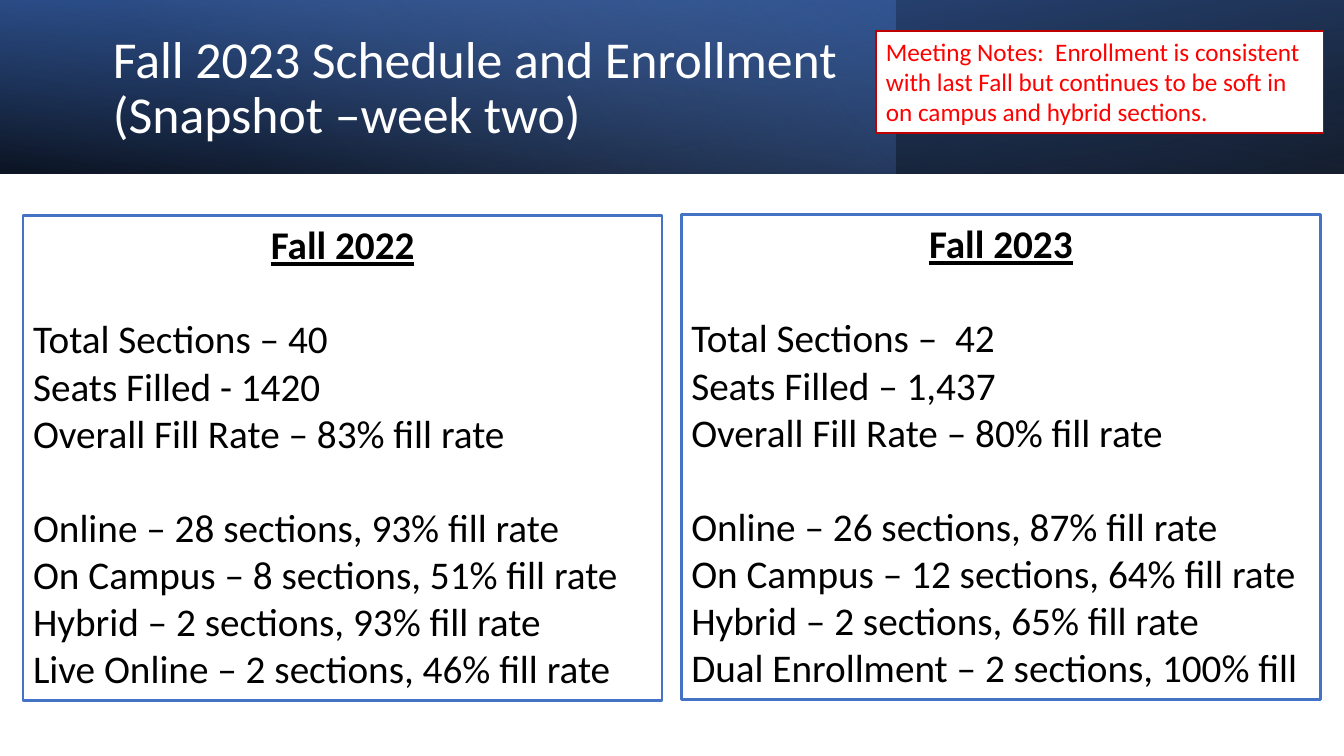
import pptx
import pptx.dml.color
import pptx.enum.shapes
import pptx.enum.text
import pptx.oxml
import pptx.oxml.ns
import pptx.util

Pt = pptx.util.Pt
RGBColor = pptx.dml.color.RGBColor
Align = pptx.enum.text.PP_ALIGN
Anchor = pptx.enum.text.MSO_ANCHOR

WHITE = RGBColor(0xFF, 0xFF, 0xFF)
BLACK = RGBColor(0x00, 0x00, 0x00)
NAVY = RGBColor(0x2F, 0x55, 0x97)
BLUE = RGBColor(0x44, 0x72, 0xC4)
PALE_BLUE = RGBColor(0x8F, 0xAA, 0xDC)
RED = RGBColor(0xFF, 0x00, 0x00)
DARK_RED = RGBColor(0xC0, 0x00, 0x00)

PAGE_WIDTH, PAGE_HEIGHT, BAND_HEIGHT = 960, 540, 123.84


class SlideBuilder:
    font = "Calibri"
    body_size = 28
    blank_line = 33.6

    def __init__(self, page):
        self.page = page

    def add_span(self, para, text, size, color, heading=False):
        span = para.add_run()
        span.text = text
        span.font.name = self.font
        span.font.size = Pt(size)
        span.font.color.rgb = color
        span.font.bold = heading
        span.font.underline = heading

    def gradient_band(self, width, angle, stops, rotation=0, flip=False):
        """Stops are (position %, colour, opacity %)."""
        band = self.page.shapes.add_shape(
            pptx.enum.shapes.MSO_SHAPE.RECTANGLE, 0, 0, Pt(width), Pt(BAND_HEIGHT))
        band.shadow.inherit = False
        band.line.fill.background()
        band.rotation = rotation
        properties = band.element.spPr
        if flip:
            properties.find(pptx.oxml.ns.qn("a:xfrm")).set("flipH", "1")
        stop_xml = "".join(
            f'<a:gs pos="{position * 1000}"><a:srgbClr val="{color}">'
            f'<a:alpha val="{opacity * 1000}"/></a:srgbClr></a:gs>'
            for position, color, opacity in stops)
        gradient = pptx.oxml.parse_xml(
            f'<a:gradFill {pptx.oxml.ns.nsdecls("a")} rotWithShape="1">'
            f'<a:gsLst>{stop_xml}</a:gsLst>'
            f'<a:lin ang="{angle * 60000}" scaled="0"/></a:gradFill>')
        properties.find(pptx.oxml.ns.qn("a:prstGeom")).addnext(gradient)

    def title(self, lines, left, top, width, height, size):
        title = self.page.shapes.title
        title.left, title.top = Pt(left), Pt(top)
        title.width, title.height = Pt(width), Pt(height)
        # Bring the title in front of the bands
        title.element.getparent().append(title.element)
        frame = title.text_frame
        frame.word_wrap = True
        frame.auto_size = pptx.enum.text.MSO_AUTO_SIZE.NONE
        frame.vertical_anchor = Anchor.MIDDLE
        para = frame.paragraphs[0]
        para.alignment = Align.LEFT
        para.line_spacing = 0.9
        para.space_before = Pt(0)
        for index, line in enumerate(lines):
            if index:
                para.add_line_break()
            self.add_span(para, line, size, WHITE)

    def outlined_box(self, left, top, width, height, color, weight):
        box = self.page.shapes.add_textbox(Pt(left), Pt(top), Pt(width), Pt(height))
        box.line.color.rgb = color
        box.line.width = Pt(weight)
        box.text_frame.word_wrap = True
        box.text_frame.vertical_anchor = Anchor.TOP
        return box

    def term_box(self, left, top, heading, groups):
        box = self.outlined_box(left, top, 456.48, 346.32, BLUE, 1.75)
        para = box.text_frame.paragraphs[0]
        para.alignment = Align.CENTER
        self.add_span(para, heading, self.body_size, BLACK, heading=True)
        for group in groups:
            for index, line in enumerate(group):
                para = box.text_frame.add_paragraph()
                para.alignment = Align.LEFT
                para.space_before = Pt(0 if index else self.blank_line)
                self.add_span(para, line, self.body_size, BLACK)

    def note(self, text, left, top, width, height):
        box = self.outlined_box(left, top, width, height, DARK_RED, 1.25)
        box.fill.solid()
        box.fill.fore_color.rgb = WHITE
        self.add_span(box.text_frame.paragraphs[0], text, 18, RED)


def main():
    deck = pptx.Presentation()
    deck.slide_width, deck.slide_height = Pt(PAGE_WIDTH), Pt(PAGE_HEIGHT)
    builder = SlideBuilder(deck.slides.add_slide(deck.slide_layouts[5]))

    # Header bands
    builder.gradient_band(PAGE_WIDTH, 100, [(0, BLACK, 96), (100, NAVY, 100)],
                          rotation=180, flip=True)
    builder.gradient_band(640, 140, [(0, BLUE, 41), (74, PALE_BLUE, 0)])
    builder.gradient_band(PAGE_WIDTH, 260, [(0, BLACK, 63), (78, BLUE, 15)], flip=True)

    # Title
    builder.title(["Fall 2023 Schedule and Enrollment", "(Snapshot –week two)"],
                  73.44, 18, 813.6, 91.44, 37)

    # Term comparison
    builder.term_box(16.56, 154.08, "Fall 2022", [
        ["Total Sections – 40",
         "Seats Filled - 1420",
         "Overall Fill Rate – 83% fill rate"],
        ["Online – 28 sections, 93% fill rate",
         "On Campus – 8 sections, 51% fill rate",
         "Hybrid – 2 sections, 93% fill rate",
         "Live Online – 2 sections, 46% fill rate"],
    ])
    builder.term_box(486.72, 153.36, "Fall 2023", [
        ["Total Sections –  42",
         "Seats Filled – 1,437",
         "Overall Fill Rate – 80% fill rate"],
        ["Online – 26 sections, 87% fill rate",
         "On Campus – 12 sections, 64% fill rate",
         "Hybrid – 2 sections, 65% fill rate",
         "Dual Enrollment – 2 sections, 100% fill"],
    ])

    # Meeting notes
    builder.note("Meeting Notes:  Enrollment is consistent with last Fall but continues "
                 "to be soft in on campus and hybrid sections.",
                 625.68, 22.32, 319.68, 72.72)

    deck.save("out.pptx")


if __name__ == "__main__":
    main()
